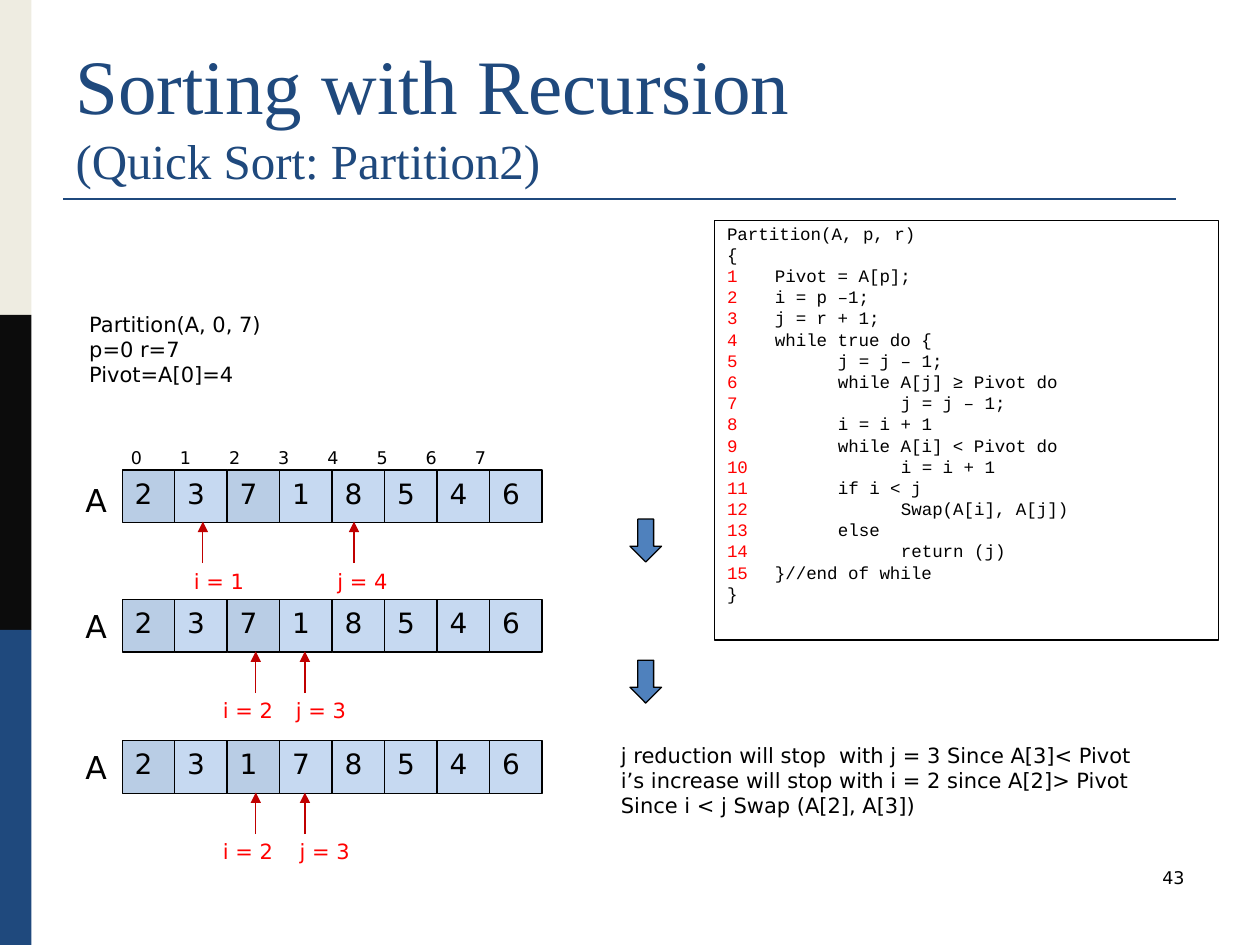
from lxml.etree import SubElement
from pptx import Presentation
from pptx.dml.color import RGBColor
from pptx.enum.shapes import MSO_CONNECTOR as Connector, MSO_SHAPE as Shape
from pptx.enum.text import MSO_ANCHOR as Anchor, MSO_AUTO_SIZE as AutoSize, PP_ALIGN as Align
from pptx.oxml.ns import qn
from pptx.util import Inches, Pt

BLACK = RGBColor(0, 0, 0)
RED = RGBColor(0xFF, 0, 0)
DARK_RED = RGBColor(0xC0, 0, 0)
NAVY = RGBColor(0x1F, 0x49, 0x7D)
BLUE = RGBColor(0x4F, 0x81, 0xBD)
CREAM = RGBColor(0xEE, 0xEC, 0xE1)
NEAR_BLACK = RGBColor(0x0C, 0x0C, 0x0C)
CELL_DARK = RGBColor(0xB9, 0xCD, 0xE5)
CELL_LIGHT = RGBColor(0xC6, 0xD9, 0xF1)

SANS, SERIF, MONO = "DejaVu Sans", "Times New Roman", "Courier New"

CELL = 5 / 12
ARRAY_LEFT = 0.97
DARK_CELLS = (0, 2)
INDEX_STEP = 0.39

# Array top, top of the "A" label, values, pointers (text, text left, arrow x)
ARRAYS = [
    (3.73, 3.77, "23718546", [("i = 1", 1.44, 1.61), ("j = 4", 2.58, 2.81)]),
    (4.76, 4.77, "23718546", [("i = 2", 1.67, 2.03), ("j = 3", 2.25, 2.42)]),
    (5.88, 5.89, "23178546", [("i = 2", 1.67, 2.03), ("j = 3", 2.28, 2.42)]),
]

# Numbered lines of the pseudocode: (depth, statement)
STATEMENTS = [
    (1, "Pivot = A[p];"),
    (1, "i = p –1;"),
    (1, "j = r + 1;"),
    (1, "while true do {"),
    (2, "j = j – 1;"),
    (2, "while A[j] ≥ Pivot do"),
    (3, "j = j – 1;"),
    (2, "i = i + 1"),
    (2, "while A[i] < Pivot do"),
    (3, "i = i + 1"),
    (2, "if i < j"),
    (3, "Swap(A[i], A[j])"),
    (2, "else"),
    (3, "return (j)"),
    (1, "}//end of while"),
]


def style(span, size, color=BLACK, font=SANS):
    span.font.size = Pt(size)
    span.font.name = font
    span.font.color.rgb = color


def place(shape, left, top, width, height):
    shape.left, shape.top = Inches(left), Inches(top)
    shape.width, shape.height = Inches(width), Inches(height)


def add_text(slide, text, left, top, width, height, size, color=BLACK, align=Align.LEFT):
    box = slide.shapes.add_textbox(Inches(left), Inches(top), Inches(width), Inches(height))
    box.text_frame.word_wrap = True
    box.text_frame.text = text
    for para in box.text_frame.paragraphs:
        para.alignment = align
        for span in para.runs:
            style(span, size, color)
    return box


def add_block(slide, kind, left, top, width, height, fill, outlined=True):
    block = slide.shapes.add_shape(kind, Inches(left), Inches(top), Inches(width), Inches(height))
    block.shadow.inherit = False
    block.fill.solid()
    block.fill.fore_color.rgb = fill
    if outlined:
        block.line.color.rgb = BLACK
        block.line.width = Pt(0.75)
    else:
        block.line.fill.background()
    return block


def add_line(slide, start, end, color, width):
    line = slide.shapes.add_connector(Connector.STRAIGHT, *map(Inches, start + end))
    line.line.color.rgb = color
    line.line.width = Pt(width)
    SubElement(line._element.spPr, qn("a:effectLst"))
    return line


def add_pointer(slide, text, text_left, arrow_x, array_top):
    arrow = add_line(slide, (arrow_x, array_top + 0.74), (arrow_x, array_top + 0.41), DARK_RED, 0.75)
    SubElement(arrow.line._get_or_add_ln(), qn("a:tailEnd"), type="triangle")
    add_text(slide, text, text_left, array_top + 0.73, 0.72, 0.3, 12, RED)


def add_array(slide, top, label_top, values, pointers):
    add_text(slide, "A", 0.58, label_top, 0.5, 0.4, 18)
    for index, value in enumerate(values):
        fill = CELL_DARK if index in DARK_CELLS else CELL_LIGHT
        cell = add_block(slide, Shape.RECTANGLE, ARRAY_LEFT + index * CELL, top, CELL, CELL, fill)
        frame = cell.text_frame
        frame.vertical_anchor = Anchor.TOP
        frame.text = value
        frame.paragraphs[0].alignment = Align.LEFT
        style(frame.paragraphs[0].runs[0], 16)
    for text, text_left, arrow_x in pointers:
        add_pointer(slide, text, text_left, arrow_x, top)


def add_indices(slide):
    """Number the cells of the first array, spaced by tab stops."""
    box = add_text(slide, "\t".join("01234567"), 0.94, 3.5, 3.83, 0.27, 10)
    stops = SubElement(box.text_frame.paragraphs[0]._p.get_or_add_pPr(), qn("a:tabLst"))
    for index in range(1, 8):
        SubElement(stops, qn("a:tab"), pos=str(Inches(index * INDEX_STEP)), algn="l")


def fill_title(title):
    place(title, 0.5, 0.3, 9, 1.25)
    frame = title.text_frame
    frame.auto_size = AutoSize.NONE
    frame.vertical_anchor = Anchor.BOTTOM
    frame.text = "Sorting with Recursion\v(Quick Sort: Partition2)"
    para = frame.paragraphs[0]
    para.alignment = Align.LEFT
    for span, size in zip(para.runs, (44, 28)):
        style(span, size, NAVY, SERIF)


def fill_code(body):
    place(body, 5.67, 1.75, 4, 3.33)
    body.line.color.rgb = BLACK
    body.line.width = Pt(0.75)
    frame = body.text_frame
    frame.auto_size = AutoSize.NONE
    numbered = [(str(number), "\t" * depth + statement)
                for number, (depth, statement) in enumerate(STATEMENTS, 1)]
    lines = [("", "Partition(A, p, r)"), ("", "{"), *numbered, ("", "}")]
    for position, (number, code) in enumerate(lines):
        para = frame.add_paragraph() if position else frame.paragraphs[0]
        para.line_spacing = 0.8
        para.space_before = Pt(2.5)
        properties = para._p.get_or_add_pPr()
        properties.set("marL", str(Inches(0.38)))
        properties.set("indent", str(Inches(-0.38)))
        SubElement(properties, qn("a:buNone"))
        for text, color in ((number, RED), (code, BLACK)):
            if text:
                span = para.add_run()
                span.text = text
                style(span, 10, color, MONO)


def main():
    deck = Presentation()
    deck.slide_width, deck.slide_height = Inches(10), Inches(7.5)
    slide = deck.slides.add_slide(deck.slide_layouts[1])

    for index, color in enumerate((CREAM, NEAR_BLACK, NAVY)):
        add_block(slide, Shape.RECTANGLE, 0, index * 2.5, 0.25, 2.5, color, outlined=False)
    add_line(slide, (0.5, 1.58), (9.33, 1.58), NAVY, 1.5)
    fill_title(slide.shapes.title)
    fill_code(slide.placeholders[1])

    add_text(slide, "Partition(A, 0, 7)\np=0 r=7\nPivot=A[0]=4", 0.61, 2.42, 2.29, 0.71, 12)
    add_indices(slide)
    for array in ARRAYS:
        add_array(slide, *array)
    for top in (4.12, 5.24):
        add_block(slide, Shape.DOWN_ARROW, 5, top, 0.25, 0.34, BLUE)
    add_text(slide, "j reduction will stop  with j = 3 Since A[3]< Pivot\n"
             "i’s increase will stop with i = 2 since A[2]> Pivot\n"
             "Since i < j Swap (A[2], A[3])", 4.83, 5.84, 5, 0.71, 12)
    add_text(slide, "43", 7.17, 6.83, 2.33, 0.5, 10, align=Align.RIGHT)
    deck.save("out.pptx")


if __name__ == "__main__":
    main()
